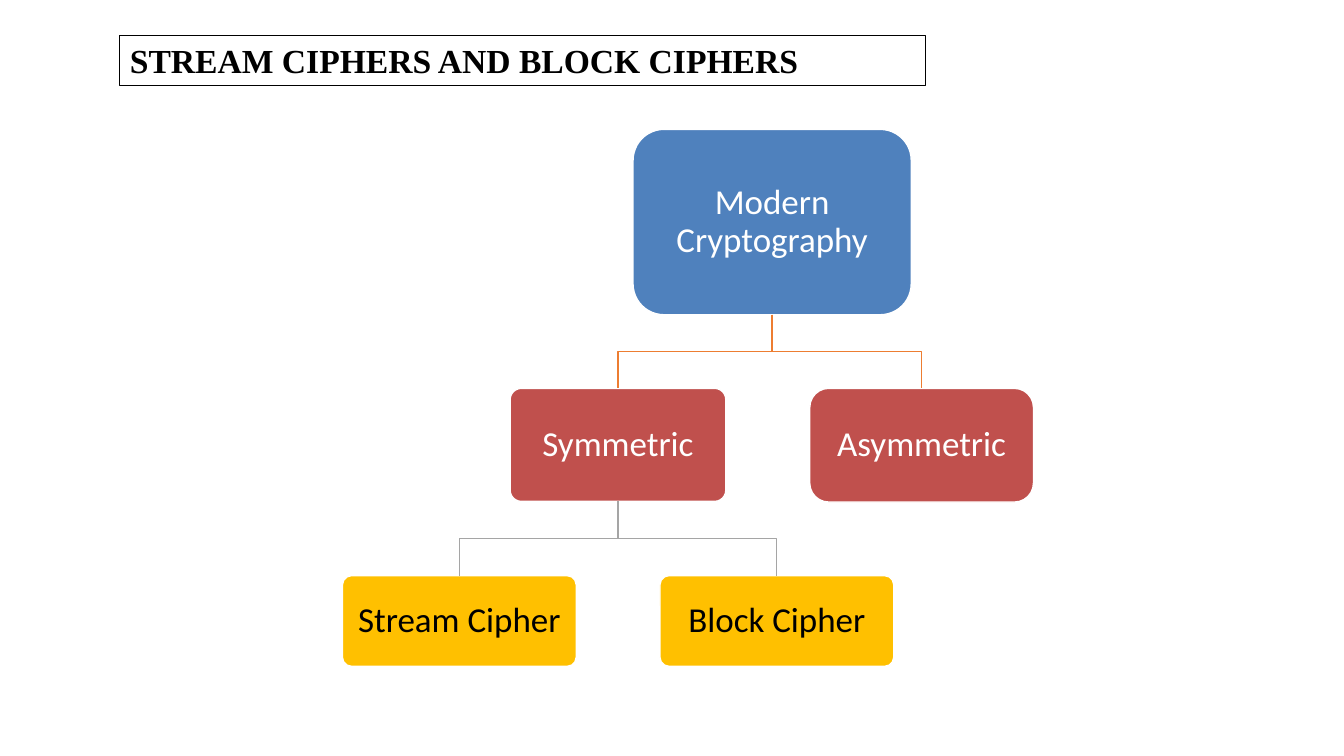
import pptx
import pptx.dml.color
import pptx.enum.shapes
import pptx.enum.text
import pptx.util

Pt = pptx.util.Pt
SHAPES = pptx.enum.shapes.MSO_SHAPE
ALIGN = pptx.enum.text.PP_ALIGN
ANCHOR = pptx.enum.text.MSO_ANCHOR

WHITE, BLACK = "FFFFFF", "000000"
BLUE, RED, YELLOW = "4F81BD", "C0504D", "FFC000"
ORANGE, GRAY = "ED7D31", "A5A5A5"


def color(hex_string):
    return pptx.dml.color.RGBColor.from_string(hex_string)


class CipherSlide:
    title_font = "Times New Roman"
    node_font = "Calibri"
    title_size = 24
    node_size = 25
    inset = 7.2

    def __init__(self, presentation):
        self.slide = presentation.slides.add_slide(presentation.slide_layouts[6])

    def outline(self, shape, line_color, width):
        shape.line.color.rgb = color(line_color)
        shape.line.width = Pt(width)

    def format_text(self, paragraph, font_name, size, text_color, bold=False):
        for run in paragraph.runs:
            run.font.name = font_name
            run.font.size = Pt(size)
            run.font.bold = bold
            run.font.color.rgb = color(text_color)

    def title(self, text, left, top, width, height):
        box = self.slide.shapes.add_textbox(Pt(left), Pt(top), Pt(width), Pt(height))
        self.outline(box, BLACK, 0.75)
        box.text_frame.word_wrap = True
        box.text_frame.text = text
        self.format_text(box.text_frame.paragraphs[0], self.title_font,
                         self.title_size, BLACK, bold=True)

    def node(self, text, left, top, width, height, fill, text_color=WHITE, corner=0.1):
        shape = self.slide.shapes.add_shape(
            SHAPES.ROUNDED_RECTANGLE, Pt(left), Pt(top), Pt(width), Pt(height))
        shape.shadow.inherit = False
        shape.adjustments[0] = corner
        shape.fill.solid()
        shape.fill.fore_color.rgb = color(fill)
        self.outline(shape, WHITE, 1)
        frame = shape.text_frame
        frame.word_wrap = True
        frame.vertical_anchor = ANCHOR.MIDDLE
        frame.margin_left = frame.margin_right = Pt(self.inset)
        frame.margin_top = frame.margin_bottom = Pt(self.inset)
        frame.text = text
        paragraph = frame.paragraphs[0]
        paragraph.alignment = ALIGN.CENTER
        paragraph.line_spacing = 0.9
        self.format_text(paragraph, self.node_font, self.node_size, text_color)
        return shape

    def branch(self, parent, child, line_color):
        """Draw an elbow from the parent's bottom centre to the child's top centre."""
        start_x = parent.left + parent.width // 2
        start_y = parent.top + parent.height
        end_x = child.left + child.width // 2
        middle_y = (start_y + child.top) // 2
        builder = self.slide.shapes.build_freeform(start_x, start_y)
        builder.add_line_segments(
            [(start_x, middle_y), (end_x, middle_y), (end_x, child.top)], close=False)
        elbow = builder.convert_to_shape()
        elbow.shadow.inherit = False
        elbow.fill.background()
        self.outline(elbow, line_color, 1)


def main():
    presentation = pptx.Presentation()
    presentation.slide_width = Pt(960)
    presentation.slide_height = Pt(540)
    page = CipherSlide(presentation)

    page.title("STREAM CIPHERS AND BLOCK CIPHERS", 85.7, 25.2, 575.3, 36)
    modern = page.node("Modern Cryptography", 452.2, 92.4, 198.7, 132.4, BLUE, corner=0.1667)
    symmetric = page.node("Symmetric", 364.4, 277.4, 154.1, 80.8, RED)
    asymmetric = page.node("Asymmetric", 578.4, 277.4, 159.8, 81.2, RED, corner=0.1667)
    stream, block = [
        page.node(text, left, 411.2, 167, 64.8, YELLOW, BLACK)
        for text, left in (("Stream Cipher", 244.6), ("Block Cipher", 471.4))
    ]

    for parent, child, line_color in (
        (modern, symmetric, ORANGE),
        (modern, asymmetric, ORANGE),
        (symmetric, stream, GRAY),
        (symmetric, block, GRAY),
    ):
        page.branch(parent, child, line_color)

    presentation.save("out.pptx")


if __name__ == "__main__":
    main()
